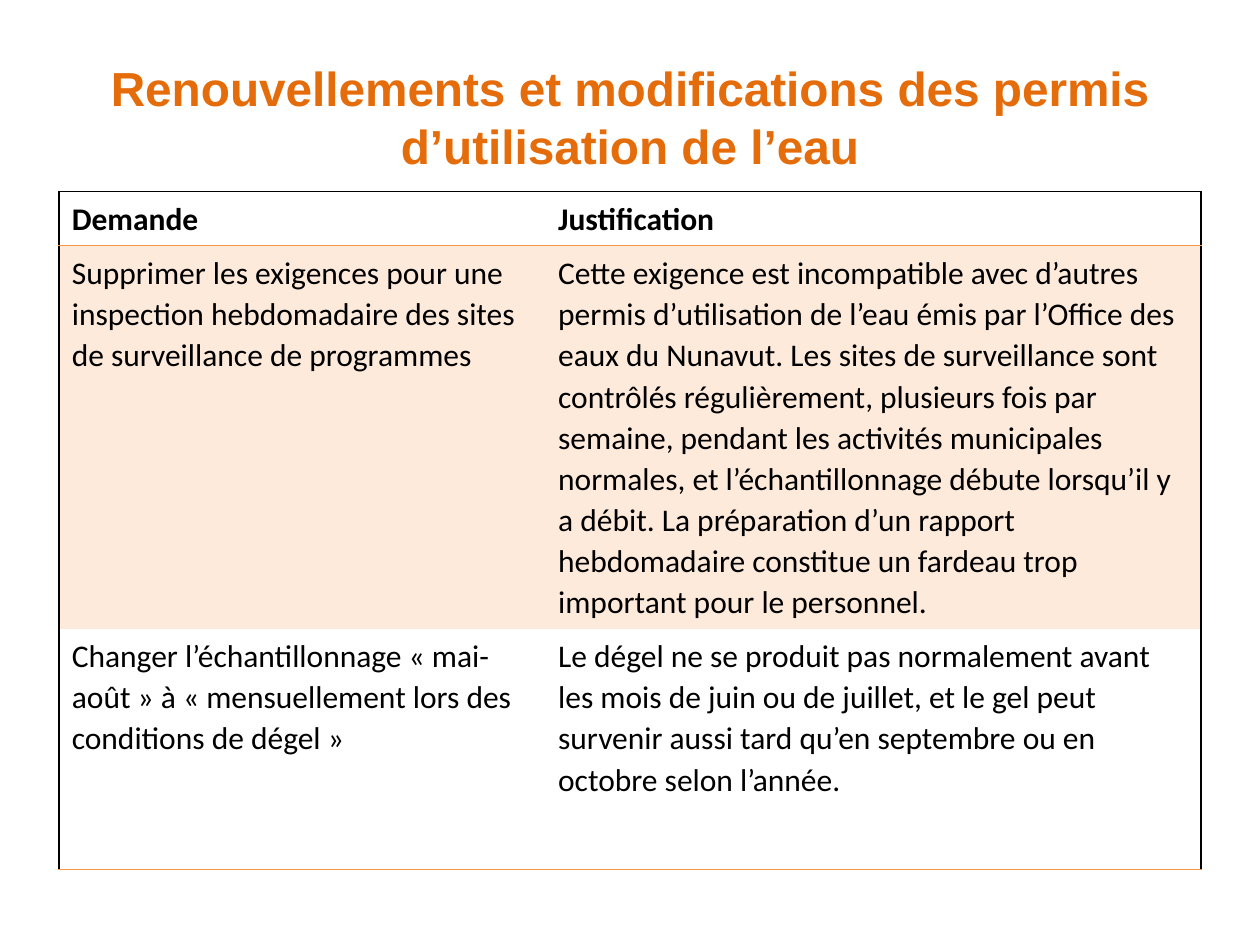
import pptx
import pptx.util
import pptx.dml.color
import pptx.enum.text
import pptx.oxml
import pptx.oxml.ns
from pptx.util import Inches


def write(frame, text, font, size, color, bold=False, align="LEFT", spacing=1.0, after=0):
    frame.word_wrap = True
    paragraph = frame.paragraphs[0]
    paragraph.alignment = getattr(pptx.enum.text.PP_ALIGN, align)
    paragraph.line_spacing = spacing
    paragraph.space_after = pptx.util.Pt(after)
    run = paragraph.add_run()
    run.text = text
    run.font.name = font
    run.font.size = pptx.util.Pt(size)
    run.font.bold = bold
    run.font.color.rgb = pptx.dml.color.RGBColor.from_string(color)


def add_border(cell, side, color):
    paint = f'<a:solidFill><a:srgbClr val="{color}"/></a:solidFill>' if color else "<a:noFill/>"
    cell._tc.get_or_add_tcPr().append(pptx.oxml.parse_xml(
        f'<a:ln{side} {pptx.oxml.ns.nsdecls("a")} w="12700">{paint}</a:ln{side}>'))


BLACK = "000000"
ORANGE = "F79646"

deck = pptx.Presentation()
deck.slide_width = Inches(10)
deck.slide_height = Inches(7.5)
slide = deck.slides.add_slide(deck.slide_layouts[5])

title = slide.shapes.title
title.left, title.top = Inches(0), Inches(0.3)
title.width, title.height = Inches(10), Inches(1.25)
title.text_frame.vertical_anchor = pptx.enum.text.MSO_ANCHOR.MIDDLE
write(title.text_frame, "Renouvellements et modifications des permis d’utilisation de l’eau",
      font="Arial", size=27.3, color="E46C0A", bold=True, align="CENTER")

requests = [
    ("Demande", "Justification"),
    ("Supprimer les exigences pour une inspection hebdomadaire des sites de surveillance "
     "de programmes",
     "Cette exigence est incompatible avec d’autres permis d’utilisation de l’eau émis par "
     "l’Office des eaux du Nunavut. Les sites de surveillance sont contrôlés régulièrement, "
     "plusieurs fois par semaine, pendant les activités municipales normales, et "
     "l’échantillonnage débute lorsqu’il y a débit. La préparation d’un rapport hebdomadaire "
     "constitue un fardeau trop important pour le personnel."),
    ("Changer l’échantillonnage « mai-août » à « mensuellement lors des conditions de dégel »",
     "Le dégel ne se produit pas normalement avant les mois de juin ou de juillet, et le gel "
     "peut survenir aussi tard qu’en septembre ou en octobre selon l’année."),
]
row_heights = [0.43, 3.04, 1.91]
column_widths = [3.86, 5.2]
row_rules = [BLACK, ORANGE, None, ORANGE]
column_rules = [BLACK, None, BLACK]

table = slide.shapes.add_table(3, 2, Inches(0.47), Inches(1.52),
                               Inches(sum(column_widths)), Inches(sum(row_heights))).table
for column, width in zip(table.columns, column_widths):
    column.width = Inches(width)

for r, request in enumerate(requests):
    table.rows[r].height = Inches(row_heights[r])
    for c, text in enumerate(request):
        cell = table.cell(r, c)
        write(cell.text_frame, text, font="Calibri", size=18, color=BLACK,
              bold=r == 0, spacing=1.07, after=8)
        add_border(cell, "L", column_rules[c])
        add_border(cell, "R", column_rules[c + 1])
        add_border(cell, "T", row_rules[r])
        add_border(cell, "B", row_rules[r + 1])
        if r == 1:
            cell.fill.solid()
            cell.fill.fore_color.rgb = pptx.dml.color.RGBColor.from_string("FDEADB")
        else:
            cell.fill.background()

deck.save("out.pptx")
